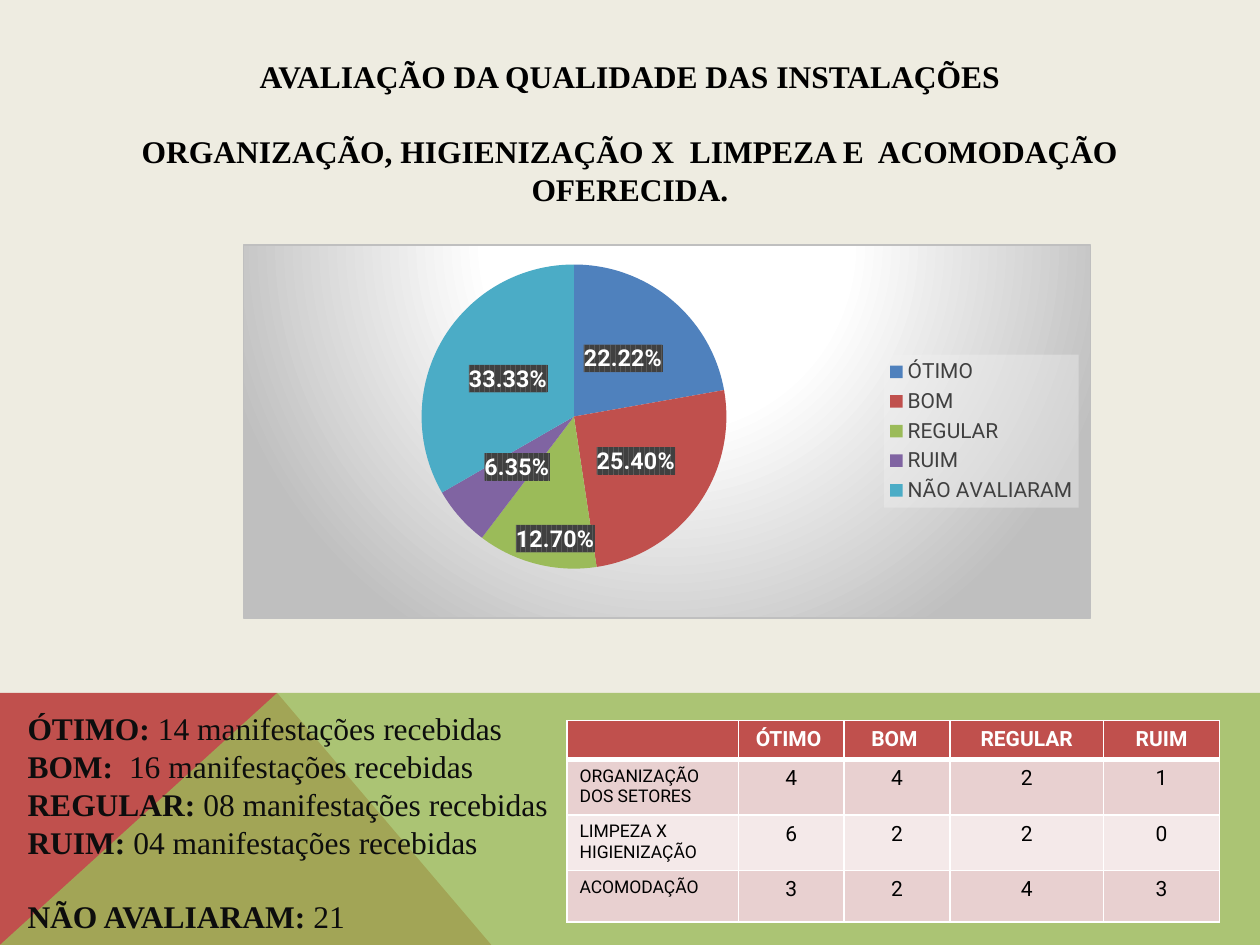
from copy import deepcopy

from lxml.etree import SubElement
from pptx import Presentation
from pptx.chart.data import CategoryChartData as ChartData
from pptx.dml.color import RGBColor as RGB
from pptx.enum.chart import XL_CHART_TYPE as CT, XL_LABEL_POSITION as LP, XL_LEGEND_POSITION as LG
from pptx.enum.text import MSO_ANCHOR as ANCHOR, PP_ALIGN as ALIGN
from pptx.oxml import parse_xml
from pptx.oxml.ns import nsdecls, qn
from pptx.util import Inches, Pt

CREAM = RGB(0xEE, 0xEC, 0xE1)
RED = RGB(0xC0, 0x50, 0x4D)
GREEN = RGB(0x9B, 0xBB, 0x59)
BLUE = RGB(0x4F, 0x81, 0xBD)
PURPLE = RGB(0x80, 0x64, 0xA2)
TEAL = RGB(0x4B, 0xAC, 0xC6)
BLACK = RGB(0, 0, 0)
INK = RGB(0x0D, 0x0D, 0x0D)
GREY = RGB(0x40, 0x40, 0x40)
WHITE = RGB(0xFF, 0xFF, 0xFF)
BANDS = [RGB(0xE8, 0xD0, 0xD0), RGB(0xF4, 0xE9, 0xE9)]

CHART_FILL = """<c:spPr %s><a:gradFill><a:gsLst>
<a:gs pos="0"><a:srgbClr val="FFFFFF"/></a:gs><a:gs pos="39000"><a:srgbClr val="FFFFFF"/></a:gs>
<a:gs pos="100000"><a:srgbClr val="BFBFBF"/></a:gs></a:gsLst>
<a:path path="circle"><a:fillToRect l="50000" t="-80000" r="50000" b="180000"/></a:path></a:gradFill>
<a:ln w="9525"><a:solidFill><a:srgbClr val="BFBFBF"/></a:solidFill></a:ln></c:spPr>"""
LEGEND_FILL = """<c:spPr %s><a:solidFill><a:srgbClr val="F2F2F2"><a:alpha val="39000"/></a:srgbClr>
</a:solidFill></c:spPr>"""
LABEL_FILL = """<c:spPr %s><a:pattFill prst="dkVert"><a:fgClr><a:srgbClr val="404040"/></a:fgClr>
<a:bgClr><a:srgbClr val="595959"/></a:bgClr></a:pattFill></c:spPr>"""


def chart_xml(xml):
    return parse_xml(xml % nsdecls("c", "a"))


def place(parent, index, **values):
    for old in parent.findall(qn("c:layout")):
        parent.remove(old)
    layout = parent.makeelement(qn("c:layout"), {})
    manual = SubElement(layout, qn("c:manualLayout"))
    for tag, value in values.items():
        SubElement(manual, qn(f"c:{tag}")).set("val", str(value))
    parent.insert(index, layout)


class Deck:
    SERIF = "Times New Roman"
    SANS = "Roboto"
    UNIT = Inches(0.1)

    def __init__(self):
        self.prs = Presentation()
        self.prs.slide_width = self.grid(100)
        self.prs.slide_height = self.grid(75)
        self.s = self.prs.slides.add_slide(self.prs.slide_layouts[6])
        self.s.background.fill.solid()
        self.s.background.fill.fore_color.rgb = CREAM

    def grid(self, n):
        return round(n * self.UNIT)

    def box(self, *lengths):
        return [self.grid(n) for n in lengths]

    def style(self, font, size, color, bold=False, name=SANS):
        font.name, font.size, font.bold = name, Pt(size), bold
        font.color.rgb = color

    def polygon(self, points, color, alpha=None):
        fb = self.s.shapes.build_freeform(*points[0], scale=self.UNIT)
        fb.add_line_segments(points[1:], close=True)
        sp = fb.convert_to_shape()
        sp.shadow.inherit = False
        sp.fill.solid()
        sp.fill.fore_color.rgb = color
        sp.line.fill.background()
        if alpha:
            clr = sp.element.spPr.find(qn("a:solidFill"))[0]
            SubElement(clr, qn("a:alpha")).set("val", str(alpha * 1000))

    def text(self, at, lines, color, align=ALIGN.LEFT, anchor=ANCHOR.TOP):
        tf = self.s.shapes.add_textbox(*self.box(*at)).text_frame
        tf.word_wrap = True
        tf.vertical_anchor = anchor
        for i, (bold, plain) in enumerate(lines):
            p = tf.paragraphs[0] if i == 0 else tf.add_paragraph()
            p.alignment = align
            for words, weight in ((bold, True), (plain, False)):
                if words:
                    r = p.add_run()
                    r.text = words
                    self.style(r.font, 18, color, weight, self.SERIF)
        tf.paragraphs[-1].space_before = Pt(21)

    def pie(self, at, slices):
        data = ChartData(number_format="0.00")
        data.categories = [name for name, _, _ in slices]
        data.add_series("Series 1", [value for _, value, _ in slices])
        chart = self.s.shapes.add_chart(CT.PIE, *self.box(*at), data).chart
        self.style(chart.font, 10, BLACK)
        chart.has_title = False
        root = chart.element
        root.find(qn("c:chart")).addnext(chart_xml(CHART_FILL))
        place(root.find(".//" + qn("c:plotArea")), 0, layoutTarget="inner", xMode="edge",
              yMode="edge", x=0.21, y=0.05, w=0.36, h=0.82)

        chart.has_legend = True
        legend = chart.legend
        legend.position = LG.RIGHT
        legend.include_in_layout = False
        self.style(legend.font, 12, GREY)
        box = root.find(".//" + qn("c:legend"))
        box.find(qn("c:overlay")).addnext(chart_xml(LEGEND_FILL))
        place(box, 1, xMode="edge", yMode="edge", x=0.756, y=0.294, w=0.23, h=0.41)

        plot = chart.plots[0]
        plot.vary_by_categories = True
        series = plot.series[0]
        for i, (_, _, color) in enumerate(slices):
            fill = series.points[i].format.fill
            fill.solid()
            fill.fore_color.rgb = color
        labels = series.data_labels
        labels.show_percentage, labels.show_value = True, False
        labels.number_format, labels.number_format_is_linked = "0.00%", False
        labels.position = LP.CENTER
        self.style(labels.font, 13.3, WHITE, True)
        dls = series._element.find(qn("c:dLbls"))
        dls.find(qn("c:numFmt")).addnext(chart_xml(LABEL_FILL))
        moved = dls.makeelement(qn("c:dLbl"), {})
        SubElement(moved, qn("c:idx")).set("val", "2")
        for child in dls:
            if child.tag != qn("c:showLeaderLines"):
                moved.append(deepcopy(child))
        place(moved, 1, x=0, y=0.13)
        dls.insert(0, moved)

    def cell(self, cell, words, fill, header, first):
        tcPr = cell._tc.get_or_add_tcPr()
        for side in "LRTB":
            width = 3 if header and side == "B" else 1
            ln = SubElement(tcPr, qn(f"a:ln{side}"), w=str(Pt(width)))
            SubElement(SubElement(ln, qn("a:solidFill")), qn("a:srgbClr")).set("val", str(WHITE))
        cell.fill.solid()
        cell.fill.fore_color.rgb = fill
        cell.text_frame.text = words
        p = cell.text_frame.paragraphs[0]
        p.alignment = ALIGN.LEFT if first else ALIGN.CENTER
        self.style(p.font, 10 if first else 12, WHITE if header else BLACK, header)
        for r in p.runs:
            self.style(r.font, 10 if first else 12, WHITE if header else BLACK, header)

    def table(self, left, top, widths, heights, rows):
        at = self.box(left, top, sum(widths), sum(heights))
        table = self.s.shapes.add_table(len(rows), len(widths), *at).table
        for column, width in zip(table.columns, widths):
            column.width = self.grid(width)
        for i, (row, height) in enumerate(zip(rows, heights)):
            table.rows[i].height = self.grid(height)
            for j, words in enumerate(row):
                fill = BANDS[(i - 1) % 2] if i else RED
                self.cell(table.cell(i, j), words, fill, i == 0, j == 0)


def main():
    deck = Deck()
    deck.polygon([(0, 75), (0, 55.2), (22.3, 55.2), (39.1, 75)], RED)
    deck.polygon([(0, 75), (22.3, 55.2), (100, 55.3), (100, 75)], GREEN, alpha=80)
    deck.text((4.7, 4, 90.6, 13), [
        ("AVALIAÇÃO DA QUALIDADE DAS INSTALAÇÕES", ""),
        ("ORGANIZAÇÃO, HIGIENIZAÇÃO X  LIMPEZA E  ACOMODAÇÃO OFERECIDA.", ""),
    ], BLACK, ALIGN.CENTER, ANCHOR.MIDDLE)
    deck.text((1.2, 55.8, 43.8, 19.2), [
        ("ÓTIMO: ", "14 manifestações recebidas"),
        ("BOM:  ", "16 manifestações recebidas"),
        ("REGULAR: ", "08 manifestações recebidas"),
        ("RUIM: ", "04 manifestações recebidas"),
        ("NÃO AVALIARAM: ", "21"),
    ], INK)
    deck.pie((19.3, 19.4, 67.3, 29.7), [
        ("ÓTIMO", 22.22, BLUE),
        ("BOM", 25.4, RED),
        ("REGULAR", 12.7, GREEN),
        ("RUIM", 6.35, PURPLE),
        ("NÃO AVALIARAM", 33.33, TEAL),
    ])
    deck.table(45, 57.2, [13.6, 8.4, 8.4, 12.2, 9.2], [3.1, 4.4, 4.4, 4.1], [
        ("", "ÓTIMO ", "BOM ", "REGULAR", "RUIM"),
        ("ORGANIZAÇÃO DOS SETORES", "4", "4", "2", "1"),
        ("LIMPEZA X HIGIENIZAÇÃO", "6", "2", "2", "0"),
        ("ACOMODAÇÃO", "3", "2", "4", "3"),
    ])
    deck.prs.save("out.pptx")


if __name__ == "__main__":
    main()
